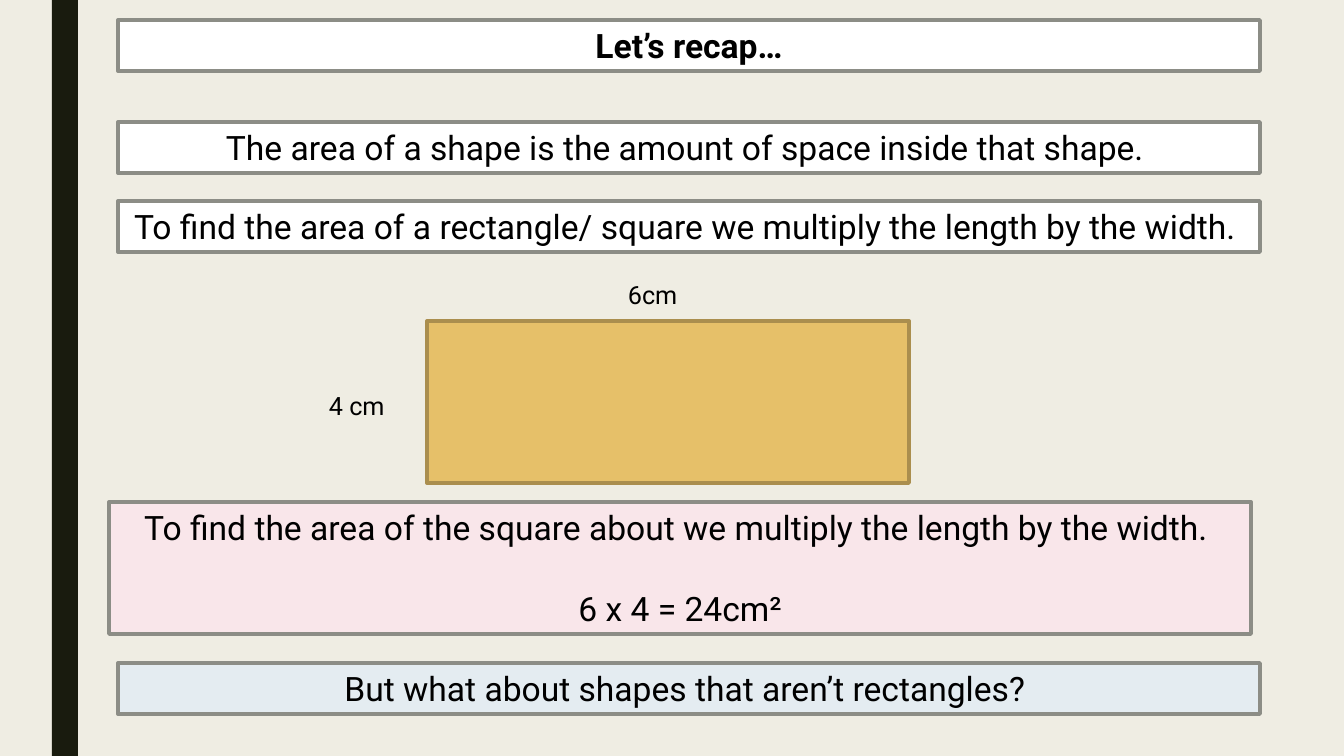
"""Builds a recap slide on the area of rectangles."""
from pptx import Presentation
from pptx.dml.color import RGBColor
from pptx.enum.shapes import MSO_SHAPE
from pptx.enum.text import MSO_ANCHOR, MSO_AUTO_SIZE, PP_ALIGN
from pptx.util import Inches, Pt

SCALE = Inches(1) / 100.8
SLIDE = (1344, 756)
FONT = "Roboto"
COLORS = {
    "page": "EFEDE3", "bar": "191B0E", "ink": "000000", "frame": "8C8D86",
    "white": "FFFFFF", "pink": "F9E6EA", "blue": "E4ECF1",
    "gold": "E6C069", "gold edge": "AA8E4E",
}

HEADING = ("Let’s recap…", (118, 20, 1142, 51))
STATEMENTS = [
    (["The area of a shape is the amount of space inside that shape. "],
     (118, 122, 1142, 51), "white"),
    (["To find the area of a rectangle/ square we multiply the length by the width. "],
     (118, 201, 1142, 51), "white"),
    (["To find the area of the square about we multiply the length by the width. ",
      "6 x 4 = 24cm²"], (109, 502, 1142, 132), "pink"),
    (["But what about shapes that aren’t rectangles? "],
     (118, 663, 1142, 51), "blue"),
]
EXAMPLE = (427, 321, 482, 162)
DIMENSIONS = [("4 cm", (319, 385, 81, 40)), ("6cm", (618, 274, 74, 40))]
SIDE_BAR = (52, 0, 26, 756)
LINE_GAP = Pt(29)


def emu(box):
    return [round(length * SCALE) for length in box]


def color(name):
    return RGBColor.from_string(COLORS[name])


def paint(panel, fill, edge=None):
    panel.fill.solid()
    panel.fill.fore_color.rgb = color(fill)
    if edge:
        panel.line.color.rgb = color(edge)
        panel.line.width = Pt(2.75)
    else:
        panel.line.fill.background()


def add_panel(slide, box, fill, edge=None):
    panel = slide.shapes.add_shape(MSO_SHAPE.RECTANGLE, *emu(box))
    panel.shadow.inherit = False
    paint(panel, fill, edge)
    return panel


def write(holder, lines, size, align, bold=False, wrap=True):
    frame = holder.text_frame
    frame.word_wrap = wrap
    frame.auto_size = MSO_AUTO_SIZE.NONE
    frame.vertical_anchor = MSO_ANCHOR.MIDDLE
    for index, line in enumerate(lines):
        paragraph = frame.add_paragraph() if index else frame.paragraphs[0]
        paragraph.alignment = align
        paragraph.space_before = LINE_GAP if index else Pt(0)
        run = paragraph.add_run()
        run.text = line
        run.font.name = FONT
        run.font.size = Pt(size)
        run.font.bold = bold
        run.font.color.rgb = color("ink")


def main():
    deck = Presentation()
    deck.slide_width, deck.slide_height = emu(SLIDE)
    slide = deck.slides.add_slide(deck.slide_layouts.get_by_name("Title Only"))
    slide.background.fill.solid()
    slide.background.fill.fore_color.rgb = color("page")

    add_panel(slide, SIDE_BAR, "bar")

    heading, heading_box = HEADING
    title = slide.shapes.title
    title.left, title.top, title.width, title.height = emu(heading_box)
    paint(title, "white", "frame")
    write(title, [heading], 24, PP_ALIGN.CENTER, bold=True)

    for lines, box, fill in STATEMENTS:
        write(add_panel(slide, box, fill, "frame"), lines, 24, PP_ALIGN.CENTER)

    add_panel(slide, EXAMPLE, "gold", "gold edge")
    for dimension, box in DIMENSIONS:
        label = slide.shapes.add_textbox(*emu(box))
        write(label, [dimension], 18, PP_ALIGN.LEFT, wrap=False)

    deck.save("out.pptx")


if __name__ == "__main__":
    main()
